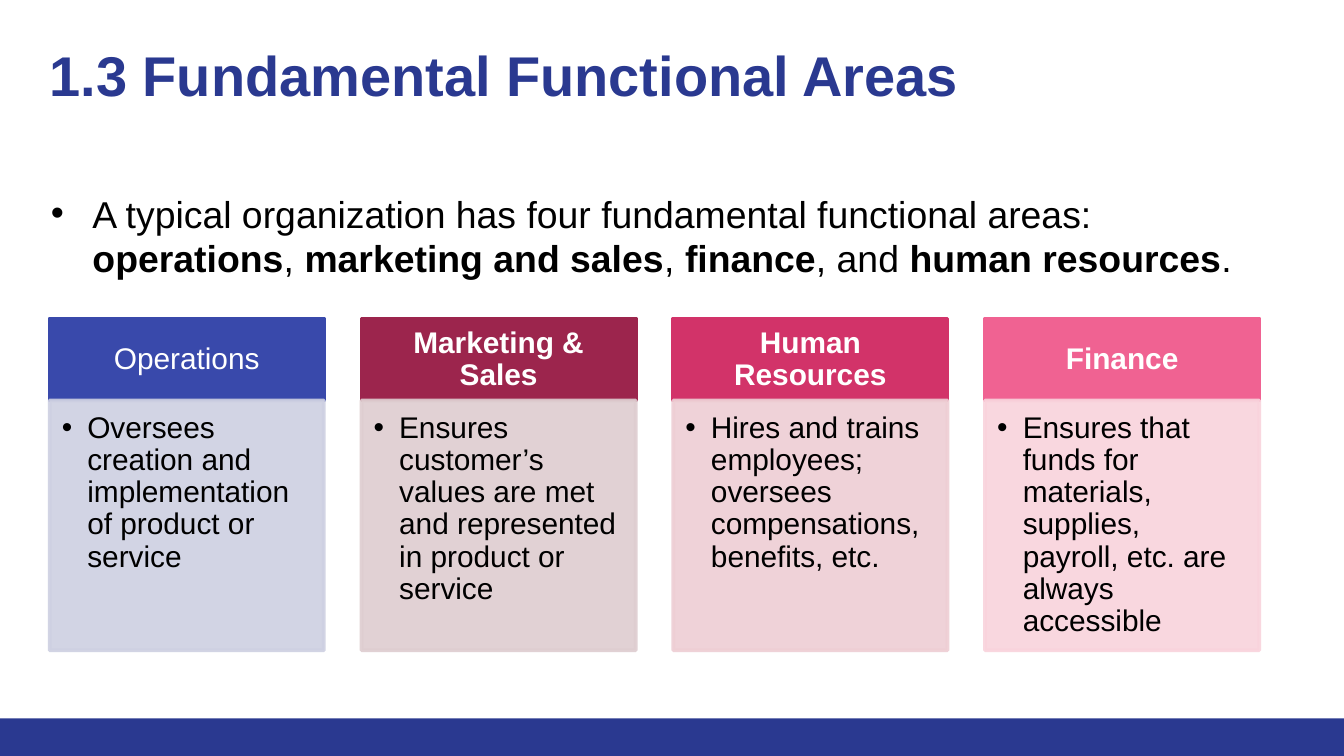
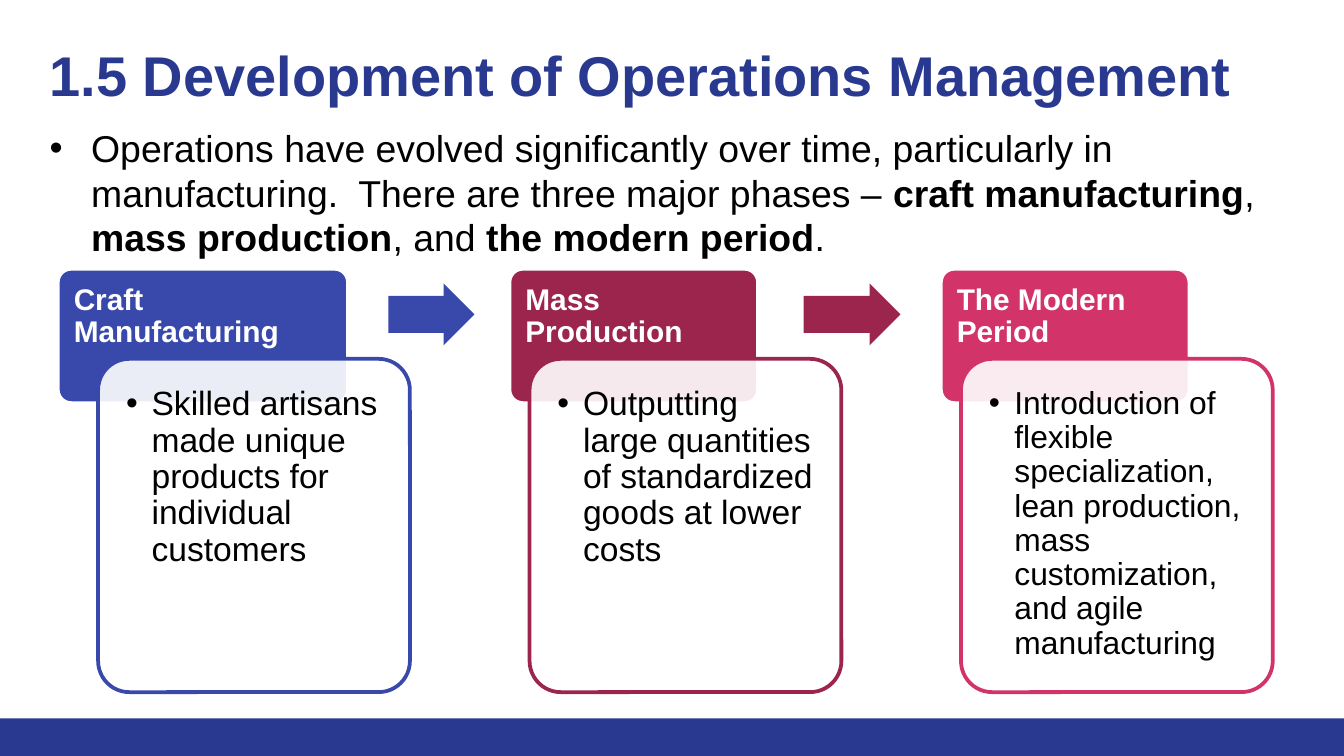
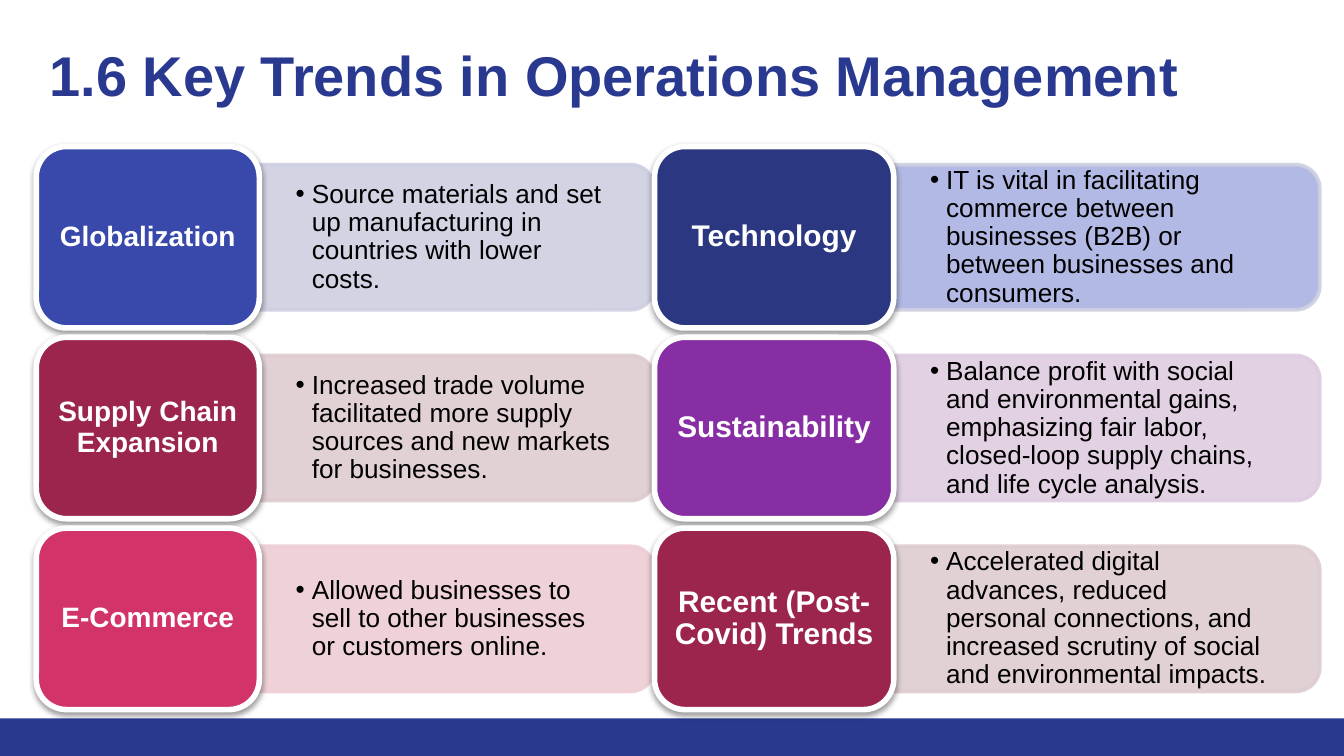
from lxml import etree
from pptx import Presentation
from pptx.dml.color import RGBColor
from pptx.enum.shapes import MSO_SHAPE
from pptx.enum.text import MSO_ANCHOR, PP_ALIGN
from pptx.oxml.ns import qn
from pptx.util import Inches, Pt

RECT = MSO_SHAPE.RECTANGLE
ROUND = MSO_SHAPE.ROUNDED_RECTANGLE
ROUND_TOP = MSO_SHAPE.ROUND_2_SAME_RECTANGLE
ARROW = MSO_SHAPE.RIGHT_ARROW
TOP, MIDDLE = MSO_ANCHOR.TOP, MSO_ANCHOR.MIDDLE
LEFT, CENTER = PP_ALIGN.LEFT, PP_ALIGN.CENTER

FONT = "Arial"
BLACK = RGBColor(0x00, 0x00, 0x00)
WHITE = RGBColor(0xFF, 0xFF, 0xFF)
NAVY = RGBColor(0x2A, 0x39, 0x90)
DEEP_BLUE = RGBColor(0x2B, 0x37, 0x80)
INDIGO = RGBColor(0x39, 0x49, 0xAB)
WINE = RGBColor(0x9C, 0x25, 0x4D)
CRIMSON = RGBColor(0xD2, 0x33, 0x69)
PINK = RGBColor(0xF0, 0x62, 0x92)
PURPLE = RGBColor(0x88, 0x2E, 0xA4)
PALE_INDIGO = RGBColor(0xCE, 0xD0, 0xE2)
PALE_WINE = RGBColor(0xDE, 0xCD, 0xD0)
PALE_CRIMSON = RGBColor(0xEE, 0xCE, 0xD4)
PALE_PINK = RGBColor(0xF9, 0xD3, 0xDC)
PALE_PURPLE = RGBColor(0xDE, 0xCD, 0xE0)
LIGHT_BLUE = RGBColor(0xAA, 0xB2, 0xE3)

SLIDE_W = 10
SLIDE_H = SLIDE_W * 9 / 16
BAND_H = 0.28

AREAS = [
    ("Operations", INDIGO, PALE_INDIGO,
     "Oversees creation and implementation of product or service"),
    ("*Marketing & Sales*", WINE, PALE_WINE,
     "Ensures customer’s values are met and represented in product or service"),
    ("*Human Resources*", CRIMSON, PALE_CRIMSON,
     "Hires and trains employees; oversees compensations, benefits, etc."),
    ("*Finance*", PINK, PALE_PINK,
     "Ensures that funds for materials, supplies, payroll, etc. are always accessible"),
]

PHASES = [
    ("*Craft Manufacturing*", INDIGO, 0.43, 2.16, 18,
     "Skilled artisans made unique products for individual customers"),
    ("*Mass Production*", WINE, 3.79, 1.85, 18,
     "Outputting large quantities of standardized goods at lower costs"),
    ("*The Modern Period*", CRIMSON, 7, 1.85, 17,
     "Introduction of flexible specialization, lean production, mass "
     "customization, and agile manufacturing"),
]
PHASE_ARROWS = [(2.89, 0.64, INDIGO), (5.98, 0.72, WINE)]

TREND_COLUMNS = [
    (0.27, 1.66, 2.94, 2.89, 15, [
        ("*Globalization*", INDIGO, PALE_INDIGO, PALE_INDIGO,
         "Source materials and set up manufacturing in countries with lower costs."),
        ("*Supply Chain Expansion*", WINE, PALE_WINE, PALE_WINE,
         "Increased trade volume facilitated more supply sources and new "
         "markets for businesses."),
        ("*E-Commerce*", CRIMSON, PALE_CRIMSON, PALE_CRIMSON,
         "Allowed businesses to sell to other businesses or customers online."),
    ]),
    (4.87, 1.78, 3.17, 3.1, 16, [
        ("*Technology*", DEEP_BLUE, LIGHT_BLUE, PALE_INDIGO,
         "IT is vital in facilitating commerce between businesses (B2B) or "
         "between businesses and consumers."),
        ("*Sustainability*", PURPLE, PALE_PURPLE, PALE_PURPLE,
         "Balance profit with social and environmental gains, emphasizing fair "
         "labor, closed-loop supply chains, and life cycle analysis."),
        ("*Recent (Post-Covid) Trends*", WINE, PALE_WINE, PALE_WINE,
         "Accelerated digital advances, reduced personal connections, and "
         "increased scrutiny of social and environmental impacts."),
    ]),
]


def set_all(obj, values):
    for name, value in values.items():
        setattr(obj, name, value)


def add_bullet(p, indent):
    pPr = p._p.get_or_add_pPr()
    pPr.set("marL", str(Inches(indent)))
    pPr.set("indent", str(-Inches(indent)))
    color = etree.SubElement(pPr, qn("a:buClr"))
    etree.SubElement(color, qn("a:srgbClr"), val=str(BLACK))
    etree.SubElement(pPr, qn("a:buFont"), typeface=FONT)
    etree.SubElement(pPr, qn("a:buChar"), char="•")


def write(sp, text, size, color=BLACK, insets=(0.1, 0.05, 0.1, 0.05),
          anchor=TOP, align=LEFT, spacing=None, bullet=None):
    tf = sp.text_frame
    sides = ("margin_left", "margin_top", "margin_right", "margin_bottom")
    set_all(tf, dict(zip(sides, map(Inches, insets))))
    set_all(tf, {"word_wrap": True, "vertical_anchor": anchor})
    p = tf.paragraphs[0]
    set_all(p, {"alignment": align, "line_spacing": spacing})
    if bullet:
        add_bullet(p, bullet)
    for i, part in enumerate(text.split("*")):
        if part:
            r = p.add_run()
            r.text = part
            set_all(r.font, {"name": FONT, "size": Pt(size), "bold": i % 2 == 1})
            r.font.color.rgb = color


def add_text(s, box, text, size, **style):
    sp = s.shapes.add_textbox(*map(Inches, box))
    write(sp, text, size, **style)


def add_block(s, kind, box, fill, line=None, width=2, adj=()):
    sp = s.shapes.add_shape(kind, *map(Inches, box))
    sp.shadow.inherit = False
    sp.fill.solid()
    sp.fill.fore_color.rgb = fill
    if line is None:
        sp.line.fill.background()
    else:
        sp.line.color.rgb = line
        sp.line.width = Pt(width)
    for i, value in enumerate(adj):
        sp.adjustments[i] = value
    return sp


def fade(sp, *parts):
    for part in parts:
        for color in sp._element.spPr.xpath(f"./{part}/a:srgbClr"):
            etree.SubElement(color, qn("a:alpha"), val="90000")


def add_soft_shadow(sp):
    effects = sp._element.spPr.find(qn("a:effectLst"))
    shadow = etree.SubElement(effects, qn("a:outerShdw"), blurRad="40000",
                              dist="20000", dir="5400000", rotWithShape="0")
    color = etree.SubElement(shadow, qn("a:srgbClr"), val=str(BLACK))
    etree.SubElement(color, qn("a:alpha"), val="38000")


def add_slide(prs, title):
    s = prs.slides.add_slide(prs.slide_layouts[6])
    add_block(s, RECT, (0, SLIDE_H - BAND_H, SLIDE_W, BAND_H), NAVY)
    add_text(s, (0.27, 0.2, 9.2, 0.89), f"*{title}*", 30, color=NAVY, insets=(0.1,) * 4)
    return s


def add_area(s, col, name, color, pale, text):
    x, y, w, head_h, body_h = 0.37 + 2.32 * col, 2.37, 2.04, 0.61, 1.86
    head = add_block(s, RECT, (x, y, w, head_h), color, color)
    write(head, name, 16, color=WHITE, insets=(0.12, 0.07, 0.12, 0.07),
          anchor=MIDDLE, align=CENTER, spacing=0.9)
    body = add_block(s, RECT, (x, y + head_h, w, body_h), pale, pale)
    fade(body, "a:solidFill", "a:ln/a:solidFill")
    write(body, text, 16, insets=(0.09, 0.09, 0.12, 0.14), spacing=0.9, bullet=0.19)


def add_phase(s, col, name, color, x, w, size, text):
    tab = add_block(s, ROUND, (x, 2, w, 1), color, WHITE, adj=[0.1])
    write(tab, name, 16, color=WHITE, insets=(0.09, 0.09, 0.09, 0.37), spacing=0.9)
    card = add_block(s, ROUND, (0.73 + 3.21 * col, 2.67, 2.32, 2.48),
                     WHITE, color, adj=[0.1])
    fade(card, "a:solidFill")
    write(card, text, size, insets=(0.14,) * 4, spacing=0.9, bullet=0.19)


def add_trend(s, row, x, tab_w, panel_w, text_w, size, name, color, pale, edge, text):
    y, tab_h, panel_h, text_h = 1.09 + 1.42 * row, 1.35, 1.08, 0.98
    panel_x, mid_y = x + tab_w, y + tab_h / 2
    upright = (panel_x + (panel_w - panel_h) / 2, mid_y - panel_w / 2, panel_h, panel_w)
    panel = add_block(s, ROUND_TOP, upright, pale, edge)
    panel.rotation = 90
    fade(panel, "a:solidFill", "a:ln/a:solidFill")
    add_text(s, (panel_x, mid_y - text_h / 2, text_w, text_h), text, 14,
             insets=(0.27, 0.14, 0.27, 0.14), anchor=MIDDLE, spacing=0.9, bullet=0.12)
    tab = add_block(s, ROUND, (x, y, tab_w, tab_h), color, WHITE, width=3)
    add_soft_shadow(tab)
    write(tab, name, size, color=WHITE, insets=(0.06, 0.03, 0.06, 0.03),
          anchor=MIDDLE, align=CENTER, spacing=0.9)


def build_areas(prs):
    s = add_slide(prs, "1.3 Fundamental Functional Areas")
    add_text(s, (0.28, 1.37, 9.45, 1.11),
             "A typical organization has four fundamental functional areas: "
             "*operations*, *marketing and sales*, *finance*, and *human resources*.",
             20, bullet=0.31)
    for col, area in enumerate(AREAS):
        add_area(s, col, *area)


def build_phases(prs):
    s = add_slide(prs, "1.5 Development of Operations Management")
    add_text(s, (0.27, 0.88, 9.58, 1.11),
             "Operations have evolved significantly over time, particularly in "
             "manufacturing.  There are three major phases – *craft manufacturing*, "
             "*mass production*, and *the modern period*.",
             20, bullet=0.31)
    for col, phase in enumerate(PHASES):
        add_phase(s, col, *phase)
    for x, w, color in PHASE_ARROWS:
        add_block(s, ARROW, (x, 2.11, w, 0.46), color, adj=[0.6, 0.5])


def build_trends(prs):
    s = add_slide(prs, "1.6 Key Trends in Operations Management")
    for *layout, trends in TREND_COLUMNS:
        for row, trend in enumerate(trends):
            add_trend(s, row, *layout, *trend)


def main():
    prs = Presentation()
    prs.slide_width, prs.slide_height = Inches(SLIDE_W), Inches(SLIDE_H)
    build_areas(prs)
    build_phases(prs)
    build_trends(prs)
    prs.save("out.pptx")


if __name__ == "__main__":
    main()
